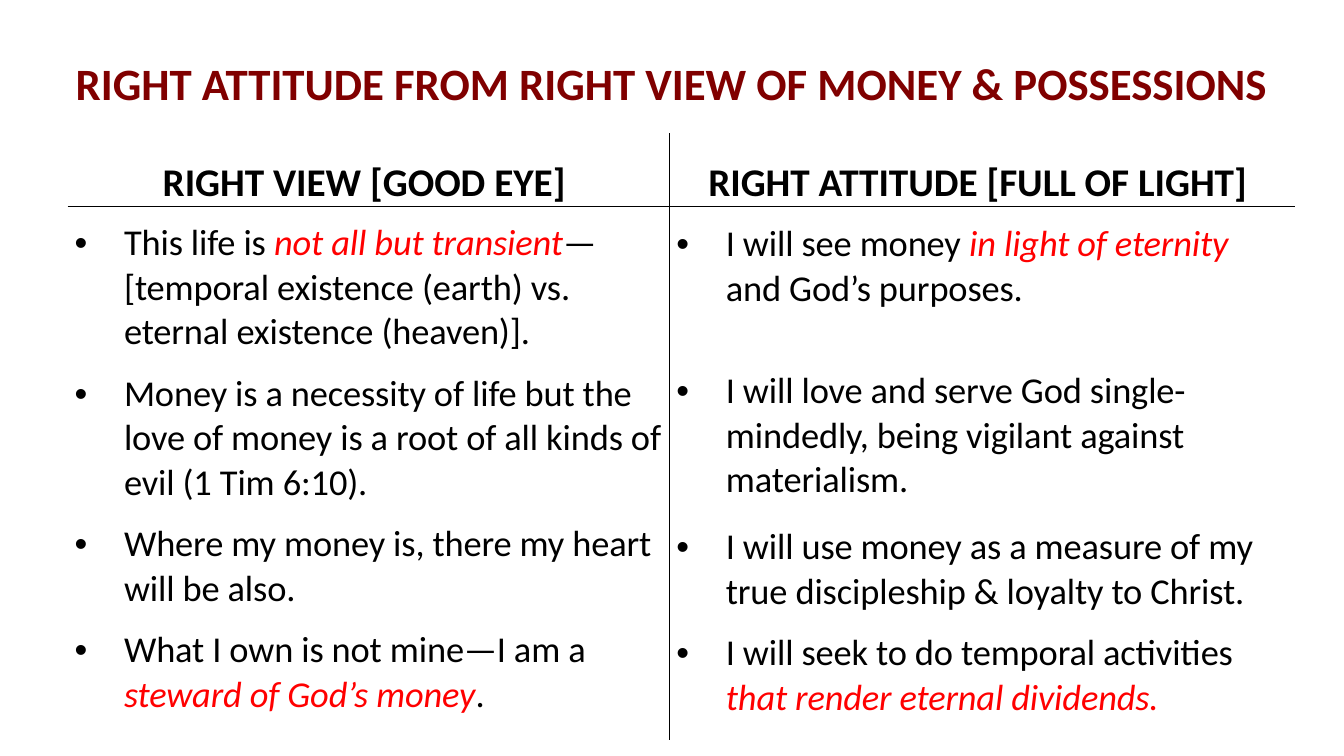
import pptx
import pptx.util
import pptx.dml.color
import pptx.enum.text
import pptx.oxml
import pptx.oxml.ns
from pptx.util import Inches

HUES = {"ink": "000000", "red": "FF0000", "title": "800000", "paper": "FFFFFF"}
ALIGN = pptx.enum.text.PP_ALIGN
ANCHOR = pptx.enum.text.MSO_ANCHOR

HEADS = ["RIGHT VIEW [GOOD EYE] ", "RIGHT ATTITUDE [FULL OF LIGHT] "]
LEFT = [
    (0, "This life is *not all but transient*—\v"
        "[temporal existence (earth) vs. eternal existence (heaven)]."),
    (12.2, "Money is a necessity of life but the love of money is a root of all "
           "kinds of evil (1 Tim 6:10)."),
    (12.2, "Where my money is, there my heart will be also."),
    (12.2, "What I own is not mine—I am a *steward of God’s money*."),
]
RIGHT = [
    (0, "I will see money *in light of eternity *and God’s purposes."),
    (41.5, "I will love and serve God single-mindedly, being vigilant against "
           "materialism."),
    (15.9, "I will use money as a measure of my true discipleship & loyalty to Christ."),
    (12.2, "I will seek to do temporal activities *that render eternal dividends.*"),
]


def color(name):
    return pptx.dml.color.RGBColor.from_string(HUES[name])


def element(tag, body=""):
    return pptx.oxml.parse_xml(f"<a:{tag} {pptx.oxml.ns.nsdecls('a')}>{body}</a:{tag.split()[0]}>")


def write(para, text, size=26, hue="ink", bold=False, align=ALIGN.LEFT,
          lines=None, before=0, bullet=False, track=0):
    if bullet:
        props = para._p.get_or_add_pPr()
        props.set("marL", str(Inches(0.49)))
        props.set("indent", str(Inches(-0.49)))
        props.append(element('buFont typeface="Arial"'))
        props.append(element('buChar char="•"'))
    para.alignment = align
    if lines:
        para.line_spacing = lines
    if before:
        para.space_before = pptx.util.Pt(before)
    for part, words in enumerate(text.split("*")):
        stress = part % 2 == 1
        for row, line in enumerate(words.split("\v")):
            if row:
                para.add_line_break()
            if not line:
                continue
            run = para.add_run()
            run.text = line
            font = run.font
            font.name = "Calibri"
            font.size = pptx.util.Pt(size)
            font.bold = bold
            font.italic = stress
            font.color.rgb = color("red" if stress else hue)
            if track:
                run._r.get_or_add_rPr().set("spc", str(track))


class Deck:
    def __init__(self):
        self.file = pptx.Presentation()
        self.file.slide_width = Inches(13.33)
        self.file.slide_height = Inches(7.5)
        self.slide = self.file.slides.add_slide(self.file.slide_layouts[6])

    def title(self, text, left, top, width, height):
        box = self.slide.shapes.add_textbox(
            Inches(left), Inches(top), Inches(width), Inches(height))
        box.text_frame.word_wrap = True
        write(box.text_frame.paragraphs[0], text, size=32, hue="title",
              bold=True, align=ALIGN.CENTER)

    def table(self, left, top, widths, heights):
        grid = self.slide.shapes.add_table(
            len(heights), len(widths), Inches(left), Inches(top),
            Inches(sum(widths)), Inches(sum(heights))).table
        grid.first_row = grid.horz_banding = False
        for col, width in zip(grid.columns, widths):
            col.width = Inches(width)
        for row, height in zip(grid.rows, heights):
            row.height = Inches(height)
        return grid

    def cell(self, cell, edges, top=0):
        cell.margin_left = cell.margin_right = Inches(0.07)
        cell.margin_top = Inches(top)
        cell.margin_bottom = 0
        props = cell._tc.get_or_add_tcPr()
        solid = f'<a:solidFill><a:srgbClr val="{HUES["ink"]}"/></a:solidFill>'
        for side in "LRTB":
            body = solid if side in edges else "<a:noFill/>"
            props.append(element(f'ln{side} w="12700"', body))
        cell.fill.solid()
        cell.fill.fore_color.rgb = color("paper")

    def head(self, cell, text, edges):
        self.cell(cell, edges)
        cell.vertical_anchor = ANCHOR.BOTTOM
        write(cell.text_frame.paragraphs[0], text, size=28, bold=True,
              align=ALIGN.CENTER, lines=1.15)

    def points(self, cell, items, edges, top):
        self.cell(cell, edges, top)
        frame = cell.text_frame
        for index, (gap, text) in enumerate(items):
            para = frame.add_paragraph() if index else frame.paragraphs[0]
            write(para, text, before=gap, bullet=True, track=-10)


def main():
    deck = Deck()
    grid = deck.table(0.67, 1.32, [5.97, 6.2], [0.73, 5.29])
    inner = ["R", "L"]
    for col, (text, items, top) in enumerate(zip(HEADS, [LEFT, RIGHT], [0.14, 0.15])):
        deck.head(grid.cell(0, col), text, inner[col] + "B")
        deck.points(grid.cell(1, col), items, inner[col] + "T", top)
    deck.title("RIGHT ATTITUDE FROM RIGHT VIEW OF MONEY & POSSESSIONS",
               0.33, 0.5, 12.67, 0.58)
    deck.file.save("out.pptx")


if __name__ == "__main__":
    main()
